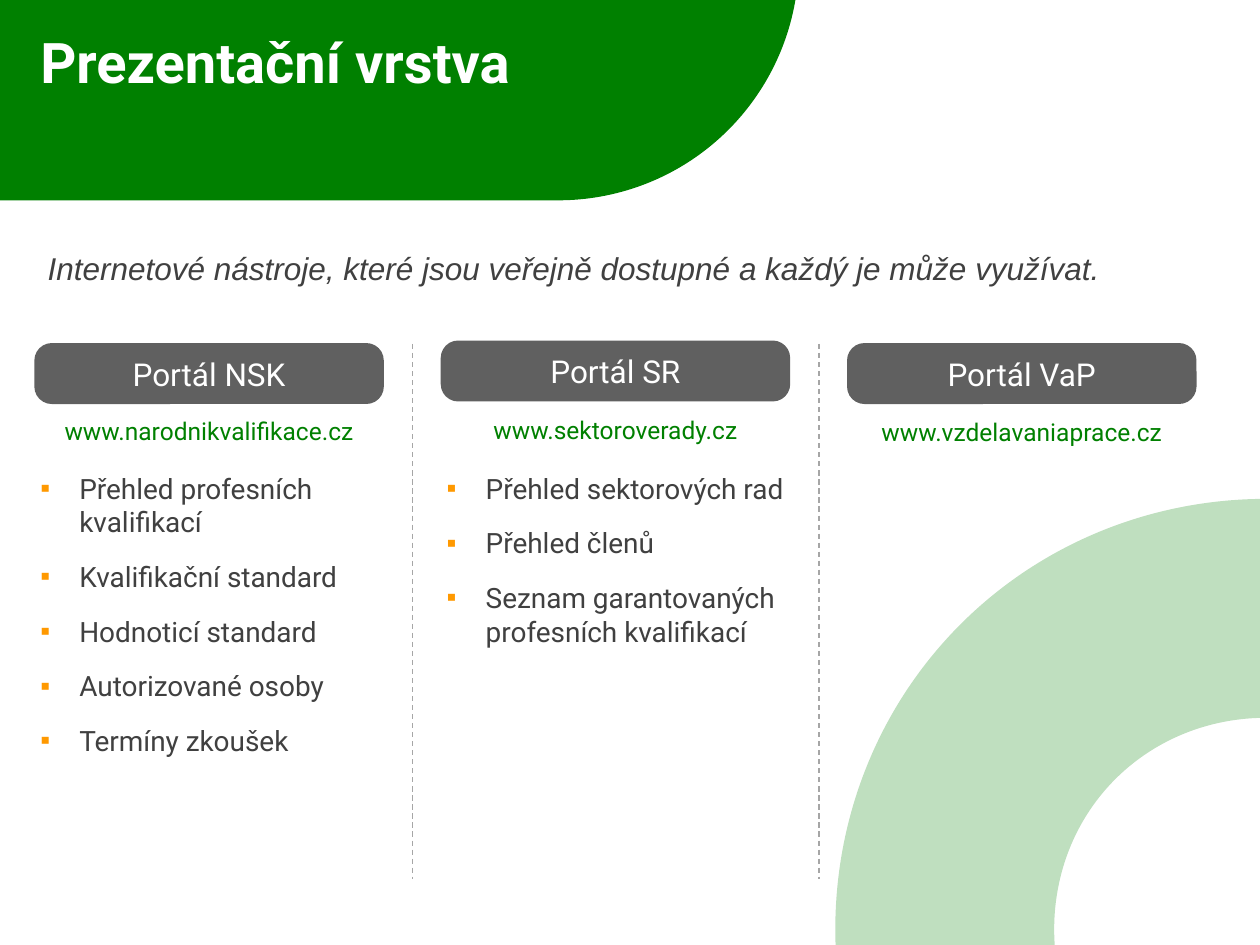
from lxml import etree
from pptx import Presentation
from pptx import util as u
from pptx.dml.color import RGBColor
from pptx.enum import dml, shapes, text
from pptx.oxml.ns import qn

COLORS = {"green": "008000", "grey": "606060", "rule": "A6A6A6",
          "ink": "404040", "white": "FFFFFF", "bullet": "FF9900"}

# Three equal columns (inches)
LEFT, WIDTH, PITCH = 0.28, 2.76, 6.45 / 2
DIVIDER_GAP = 0.23
TAB_HEIGHT, LINK_HEIGHT = 0.47, 0.34
RULE_TOP, RULE_BOTTOM = 2.73, 6.98
LIST_TOP, LIST_HEIGHT = 3.7, 3.35

# Name, tab top, address, address top, list items
PORTALS = [
    ("Portál NSK", 2.73, "www.narodnikvalifikace.cz", 3.25,
     ["Přehled profesních kvalifikací", "Kvalifikační standard",
      "Hodnoticí standard", "Autorizované osoby", "Termíny zkoušek"]),
    ("Portál SR", 2.71, "www.sektoroverady.cz", 3.24,
     ["Přehled sektorových rad", "Přehled členů",
      "Seznam garantovaných profesních kvalifikací"]),
    ("Portál VaP", 2.73, "www.vzdelavaniaprace.cz", 3.26, []),
]


def rgb(name):
    return RGBColor.from_string(COLORS[name])


def column_left(index):
    return LEFT + index * PITCH


def inches(*lengths):
    return [u.Inches(length) for length in lengths]


def place(shape, *box):
    shape.left, shape.top, shape.width, shape.height = inches(*box)


def add_bullet(paragraph):
    props = paragraph._p.get_or_add_pPr()
    props.set("marL", str(u.Inches(0.31)))
    props.set("indent", str(-u.Inches(0.31)))
    color = etree.SubElement(props, qn("a:buClr"))
    etree.SubElement(color, qn("a:srgbClr"), val=COLORS["bullet"])
    etree.SubElement(props, qn("a:buFont"), typeface="Arial")
    etree.SubElement(props, qn("a:buChar"), char="▪")


def write(shape, lines, size, color, font="Roboto", bold=False, italic=False,
          align=text.PP_ALIGN.LEFT, anchor=text.MSO_ANCHOR.TOP,
          insets=(0.1, 0.05), grow=False, bullets=False, before=0, after=0):
    """Fill a shape with one paragraph per line, all in the same format."""
    frame = shape.text_frame
    frame.word_wrap = True
    frame.auto_size = (text.MSO_AUTO_SIZE.SHAPE_TO_FIT_TEXT if grow
                       else text.MSO_AUTO_SIZE.NONE)
    frame.vertical_anchor = anchor
    frame.margin_left = frame.margin_right = u.Inches(insets[0])
    frame.margin_top = frame.margin_bottom = u.Inches(insets[1])
    for index, line in enumerate(lines):
        paragraph = frame.add_paragraph() if index else frame.paragraphs[0]
        if bullets:
            paragraph.level = 1
            add_bullet(paragraph)
        paragraph.alignment = align
        paragraph.space_before = u.Pt(before if index else 0)
        paragraph.space_after = u.Pt(after)
        run = paragraph.add_run()
        run.text = line
        run.font.name, run.font.size = font, u.Pt(size)
        run.font.bold, run.font.italic = bold, italic
        run.font.color.rgb = rgb(color)


def add_solid(slide, preset, box, color, outline=None):
    solid = slide.shapes.add_shape(preset, *inches(*box))
    solid.shadow.inherit = False
    solid.fill.solid()
    solid.fill.fore_color.rgb = rgb(color)
    if outline:
        solid.line.color.rgb = rgb(outline)
        solid.line.width = u.Pt(1)
    else:
        solid.line.fill.background()
    return solid


def add_backdrop(slide):
    """Draw the pale ring and the header band behind the placeholders."""
    preset = shapes.MSO_SHAPE
    ring = add_solid(slide, preset.BLOCK_ARC, (6.69, 3.9, 6.95, 7.18), "green")
    ring.rotation = 313.9
    ring_color = ring.fill._xPr.find(".//" + qn("a:srgbClr"))
    etree.SubElement(ring_color, qn("a:alpha"), val="25000")
    header = add_solid(slide, preset.ROUNDED_RECTANGLE,
                       (-3.5, -2.23, 9.84, 3.82), "green")
    header.adjustments[0] = 0.5
    for layer in (header, ring):
        slide.shapes._spTree.insert(2, layer._element)


def add_divider(slide, x):
    divider = slide.shapes.add_connector(
        shapes.MSO_CONNECTOR.STRAIGHT, *inches(x, RULE_TOP, x, RULE_BOTTOM))
    divider.line.color.rgb = rgb("rule")
    divider.line.width = u.Pt(0.75)
    divider.line.dash_style = dml.MSO_LINE.DASH
    etree.SubElement(divider._element.spPr, qn("a:effectLst"))


def add_label(slide, box, label, size, color, **style):
    write(slide.shapes.add_textbox(*inches(*box)), [label], size, color,
          grow=True, **style)


def add_portal_heading(slide, left, name, tab_top, address, address_top):
    centred = {"align": text.PP_ALIGN.CENTER, "anchor": text.MSO_ANCHOR.MIDDLE}
    tab = add_solid(slide, shapes.MSO_SHAPE.ROUNDED_RECTANGLE,
                    (left, tab_top, WIDTH, TAB_HEIGHT), "grey", outline="grey")
    tab.adjustments[0] = 0.28
    write(tab, [name], 18, "white", **centred)
    add_label(slide, (left, address_top, WIDTH, LINK_HEIGHT), address,
              14, "green", insets=(0.04, 0.05), **centred)


def main():
    deck = Presentation()
    deck.slide_width, deck.slide_height = inches(10, 7.5)
    slide = deck.slides.add_slide(deck.slide_layouts.get_by_name("Two Content"))
    add_backdrop(slide)

    title, *lists = slide.placeholders
    place(title, 0.22, 0.17, 5.96, 1.11)
    write(title, ["Prezentační vrstva"], 32, "white", bold=True)
    add_label(slide, (LEFT, 1.93, 9.45, 0.4),
              "Internetové nástroje, které jsou veřejně dostupné "
              "a každý je může využívat.",
              18, "ink", font="Arial", italic=True, after=12)

    for index, (*heading, items) in enumerate(PORTALS):
        left = column_left(index)
        if index:
            add_divider(slide, left - DIVIDER_GAP)
        add_portal_heading(slide, left, *heading)
        if items:
            place(lists[index], left, LIST_TOP, WIDTH, LIST_HEIGHT)
            write(lists[index], items, 16, "ink", insets=(0.04, 0.04),
                  bullets=True, before=6, after=6)

    deck.save("out.pptx")


if __name__ == "__main__":
    main()
